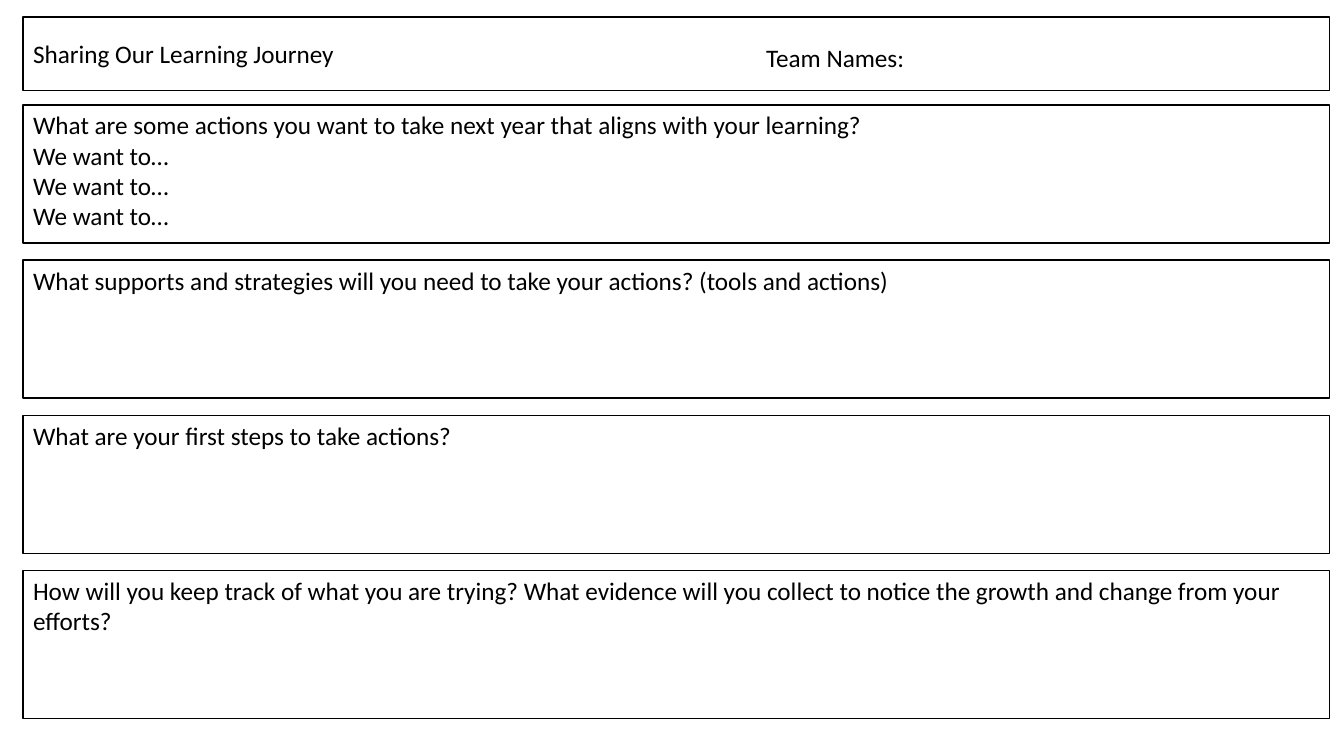
from pptx import Presentation
from pptx.dml.color import RGBColor
from pptx.enum.shapes import MSO_SHAPE
from pptx.enum.text import MSO_ANCHOR, MSO_AUTO_SIZE, PP_ALIGN
from pptx.util import Inches, Pt

BLACK = RGBColor(0x00, 0x00, 0x00)
WHITE = RGBColor(0xFF, 0xFF, 0xFF)

LEFT, WIDTH = 0.23, 12.96
FIRST_TOP, PITCH = 1.04, 1.54
HEIGHT, LAST_HEIGHT = 1.37, 1.47

QUESTIONS = [
    ["What are some actions you want to take next year that aligns with your learning?"]
    + ["We want to…"] * 3,
    ["What supports and strategies will you need to take your actions? (tools and actions)"],
    ["What are your first steps to take actions?"],
    ["How will you keep track of what you are trying? What evidence will you collect "
     "to notice the growth and change from your efforts?"],
]


class Worksheet:
    font_name = "Calibri"
    font_size = Pt(18)
    line_width = Pt(1)

    def __init__(self, slide):
        self.slide = slide

    def set_text(self, text_frame, lines):
        text_frame.text = "\n".join(lines)
        for paragraph in text_frame.paragraphs:
            paragraph.alignment = PP_ALIGN.LEFT
            paragraph.font.name = self.font_name
            paragraph.font.size = self.font_size
            paragraph.font.color.rgb = BLACK

    def box(self, top, height, lines, anchor=MSO_ANCHOR.TOP):
        shape = self.slide.shapes.add_shape(
            MSO_SHAPE.RECTANGLE, Inches(LEFT), Inches(top), Inches(WIDTH), Inches(height))
        shape.shadow.inherit = False
        shape.fill.background()
        shape.line.color.rgb = BLACK
        shape.line.width = self.line_width
        shape.text_frame.word_wrap = True
        shape.text_frame.vertical_anchor = anchor
        self.set_text(shape.text_frame, lines)

    def label(self, left, top, width, height, text):
        shape = self.slide.shapes.add_textbox(
            Inches(left), Inches(top), Inches(width), Inches(height))
        shape.text_frame.word_wrap = False
        shape.text_frame.auto_size = MSO_AUTO_SIZE.SHAPE_TO_FIT_TEXT
        self.set_text(shape.text_frame, [text])


def main():
    presentation = Presentation()
    presentation.slide_width = Inches(13.33)
    presentation.slide_height = Inches(7.5)
    slide = presentation.slides.add_slide(presentation.slide_layouts[6])
    slide.background.fill.solid()
    slide.background.fill.fore_color.rgb = WHITE

    worksheet = Worksheet(slide)
    worksheet.box(0.17, 0.73, ["Sharing Our Learning Journey"], MSO_ANCHOR.MIDDLE)
    worksheet.label(7.5, 0.37, 1.59, 0.4, "Team Names:")
    for index, lines in enumerate(QUESTIONS):
        is_last = index == len(QUESTIONS) - 1
        worksheet.box(FIRST_TOP + index * PITCH, LAST_HEIGHT if is_last else HEIGHT, lines)

    presentation.save("out.pptx")


if __name__ == "__main__":
    main()
